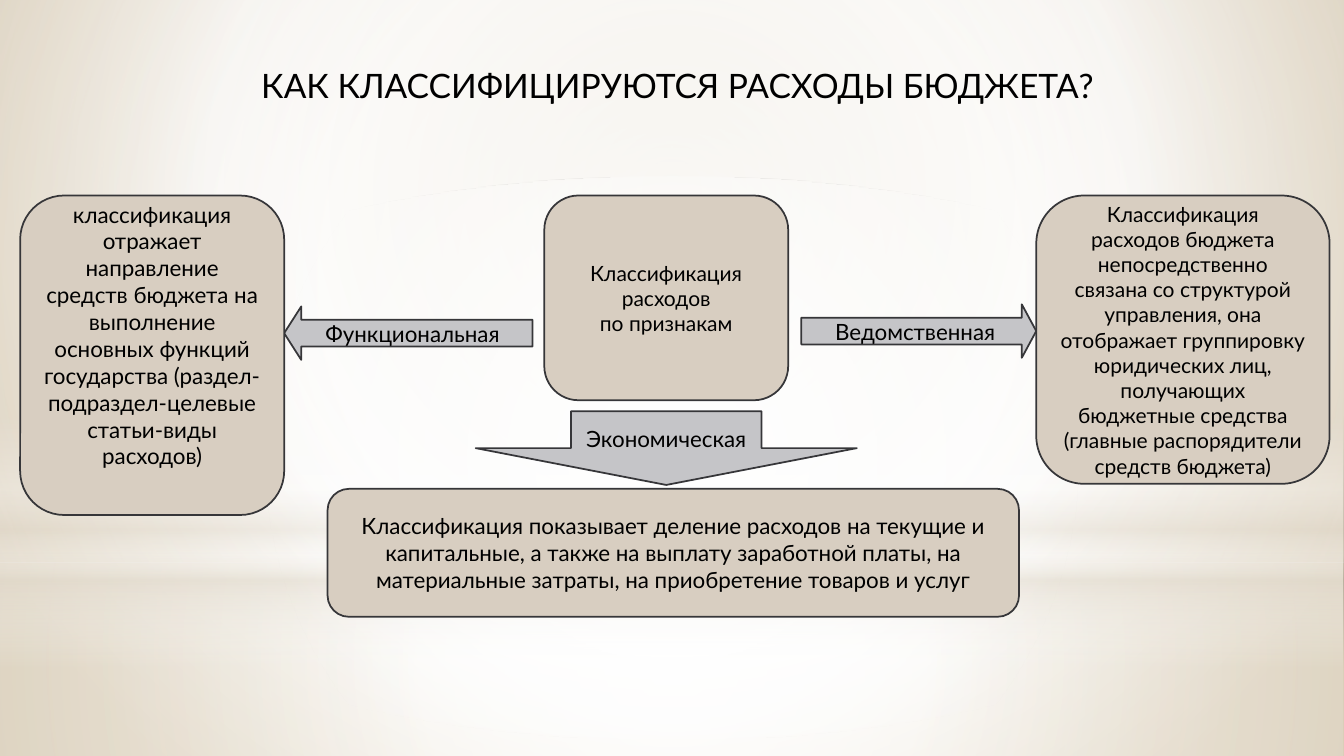
import pptx
import pptx.util
import pptx.dml.color
import pptx.enum.shapes
import pptx.enum.text
import pptx.oxml.ns
import lxml.etree

Pt = pptx.util.Pt
RGB = pptx.dml.color.RGBColor
Kind = pptx.enum.shapes.MSO_SHAPE
qn = pptx.oxml.ns.qn

BLACK = RGB(0x00, 0x00, 0x00)
WHITE = RGB(0xFF, 0xFF, 0xFF)
SAND = RGB(0xD8, 0xCE, 0xC1)
GREY = RGB(0xC5, 0xC5, 0xC8)
EDGE = RGB(0x36, 0x36, 0x39)
CREAM = RGB(0xE3, 0xDC, 0xCF)
BEIGE = RGB(0xDF, 0xD5, 0xC1)
TAN = RGB(0xCC, 0xB7, 0x91)
MID = (50, 50, 50, 50)


class Board:
    font = "Lato"
    line = 1.25

    def __init__(self, slide):
        self.slide = slide

    def blend(self, owner, fill, stops, focus):
        fill.gradient()
        grad = next(owner.iter(qn("a:gradFill")))
        for child in list(grad):
            grad.remove(child)
        group = lxml.etree.SubElement(grad, qn("a:gsLst"))
        for place, color, alpha in stops:
            stop = lxml.etree.SubElement(group, qn("a:gs"), pos=str(place * 1000))
            tint = lxml.etree.SubElement(stop, qn("a:srgbClr"), val=str(color))
            if alpha < 100:
                lxml.etree.SubElement(tint, qn("a:alpha"), val=str(alpha * 1000))
        if focus:
            route = lxml.etree.SubElement(grad, qn("a:path"), {"path": "circle"})
            sides = {side: str(part * 1000) for side, part in zip("ltrb", focus)}
            lxml.etree.SubElement(route, qn("a:fillToRect"), sides)
        else:
            lxml.etree.SubElement(grad, qn("a:lin"), ang="5400000", scaled="0")

    def back(self, stops, focus):
        self.blend(self.slide.element, self.slide.background.fill, stops, focus)

    def shape(self, kind, area):
        item = self.slide.shapes.add_shape(kind, *map(Pt, area))
        item.shadow.inherit = False
        return item

    def glow(self, kind, area, stops, focus=MID):
        item = self.shape(kind, area)
        item.line.fill.background()
        self.blend(item.element, item.fill, stops, focus)

    def text(self, frame, lines, size):
        frame.word_wrap = True
        for index, words in enumerate(lines):
            para = frame.add_paragraph() if index else frame.paragraphs[0]
            para.alignment = pptx.enum.text.PP_ALIGN.CENTER
            run = para.add_run()
            run.text = words
            run.font.name = self.font
            run.font.size = Pt(size)
            run.font.color.rgb = BLACK

    def title(self, area, words):
        box = self.slide.shapes.add_textbox(*map(Pt, area))
        self.text(box.text_frame, [words], 24)

    def label(self, kind, area, color, lines, size=16, ratios=(), foot=3.6):
        item = self.shape(kind, area)
        for index, ratio in enumerate(ratios):
            item.adjustments[index] = ratio
        item.fill.solid()
        item.fill.fore_color.rgb = color
        item.line.color.rgb = EDGE
        item.line.width = Pt(self.line)
        frame = item.text_frame
        frame.vertical_anchor = pptx.enum.text.MSO_ANCHOR.MIDDLE
        frame.margin_bottom = Pt(foot)
        self.text(frame, lines, size)

    def card(self, area, lines, size=16, foot=3.6):
        self.label(Kind.FLOWCHART_ALTERNATE_PROCESS, area, SAND, lines, size, foot=foot)

    def arrow(self, kind, area, words, ratios=()):
        self.label(kind, area, GREY, [words], ratios=ratios)


def main():
    deck = pptx.Presentation()
    deck.slide_width, deck.slide_height = Pt(960), Pt(540)
    board = Board(deck.slides.add_slide(deck.slide_layouts[6]))

    board.back([(0, BEIGE, 100), (60, WHITE, 100), (100, TAN, 100)], (20, 10, 20, 60))
    board.glow(Kind.RECTANGLE, (0, 401.8, 960, 138.2),
               [(0, WHITE, 91), (37, WHITE, 76), (100, CREAM, 79)])
    board.glow(Kind.RECTANGLE, (0, 0, 960, 401.8),
               [(0, WHITE, 89), (48, WHITE, 62), (100, CREAM, 79)])
    board.glow(Kind.RECTANGLE, (0, 296.6, 960, 180),
               [(0, WHITE, 0), (29, WHITE, 30), (45, CREAM, 40),
                (55, WHITE, 26), (65, CREAM, 60), (100, WHITE, 0)], None)
    board.glow(Kind.OVAL, (0, 126, 960, 401.8), [(0, WHITE, 100), (56, WHITE, 0)])

    board.title((41.8, 42.5, 884.2, 36), "КАК КЛАССИФИЦИРУЮТСЯ РАСХОДЫ БЮДЖЕТА?")

    top = 139.7
    board.card((388.8, top, 174.2, 146.2),
               ["Классификация расходов", "по признакам"], 15)
    board.arrow(Kind.LEFT_ARROW, (203, 218.9, 177.4, 38.2),
                "Функциональная", (0.5, 0.32))
    board.arrow(Kind.RIGHT_ARROW, (572.4, 217.4, 167.8, 38.2),
                "Ведомственная", (0.5, 0.27))
    board.card((14.4, top, 188.6, 228.2),
               ["классификация отражает направление средств бюджета на выполнение "
                "основных функций государства (раздел-подраздел-целевые "
                "статьи-виды расходов)"], foot=32.4)
    board.card((740.2, top, 209.5, 205.9),
               ["Классификация расходов бюджета непосредственно связана со структурой "
                "управления, она отображает группировку юридических лиц, получающих "
                "бюджетные средства (главные распорядители средств бюджета)"], 15)
    board.arrow(Kind.DOWN_ARROW, (339.8, 293.8, 272.2, 52.6), "Экономическая")
    board.card((234, 349.2, 493.9, 91.4),
               ["Классификация показывает деление расходов на текущие и капитальные, "
                "а также на выплату заработной платы, на материальные затраты, "
                "на приобретение товаров и услуг"])

    deck.save("out.pptx")


if __name__ == "__main__":
    main()
